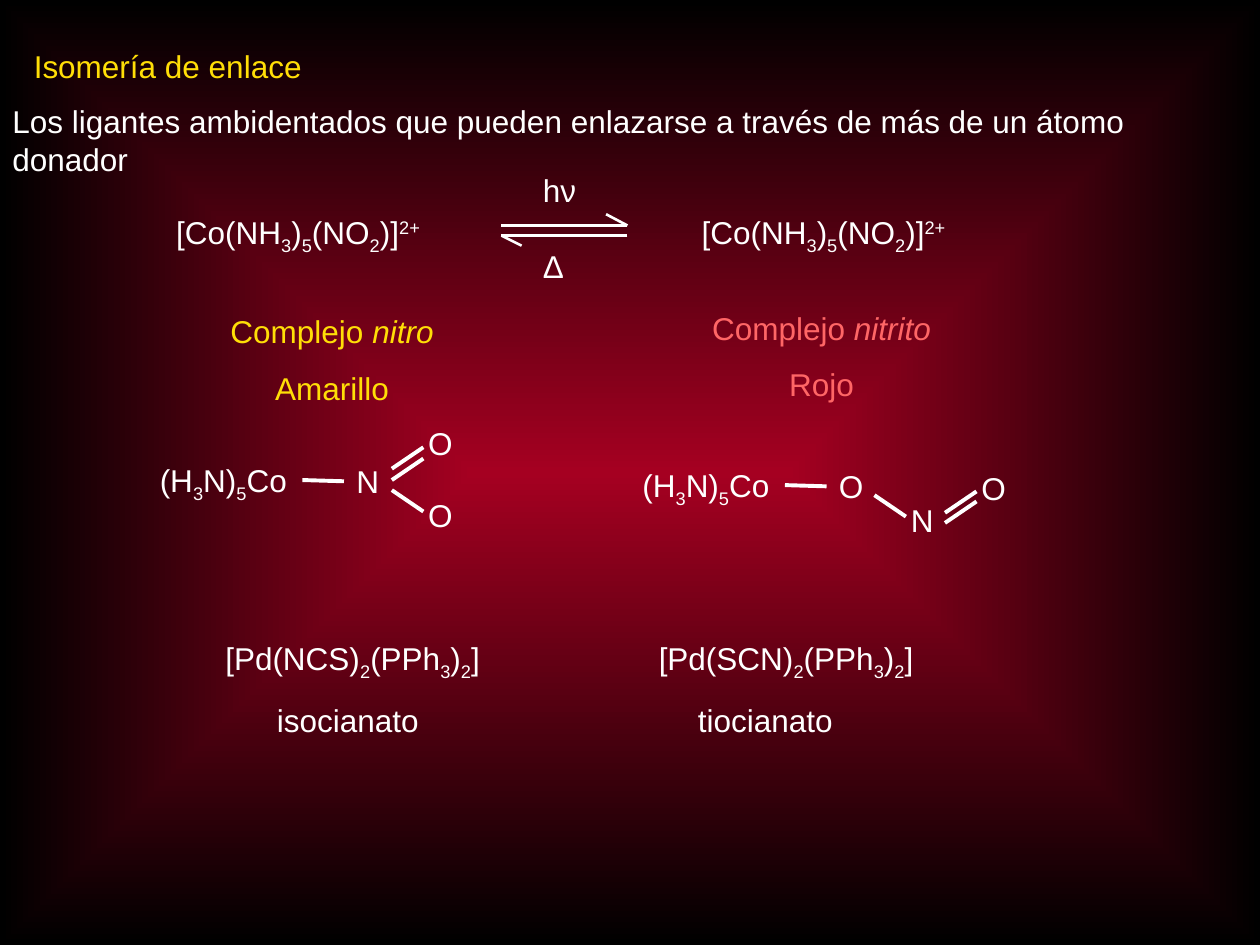
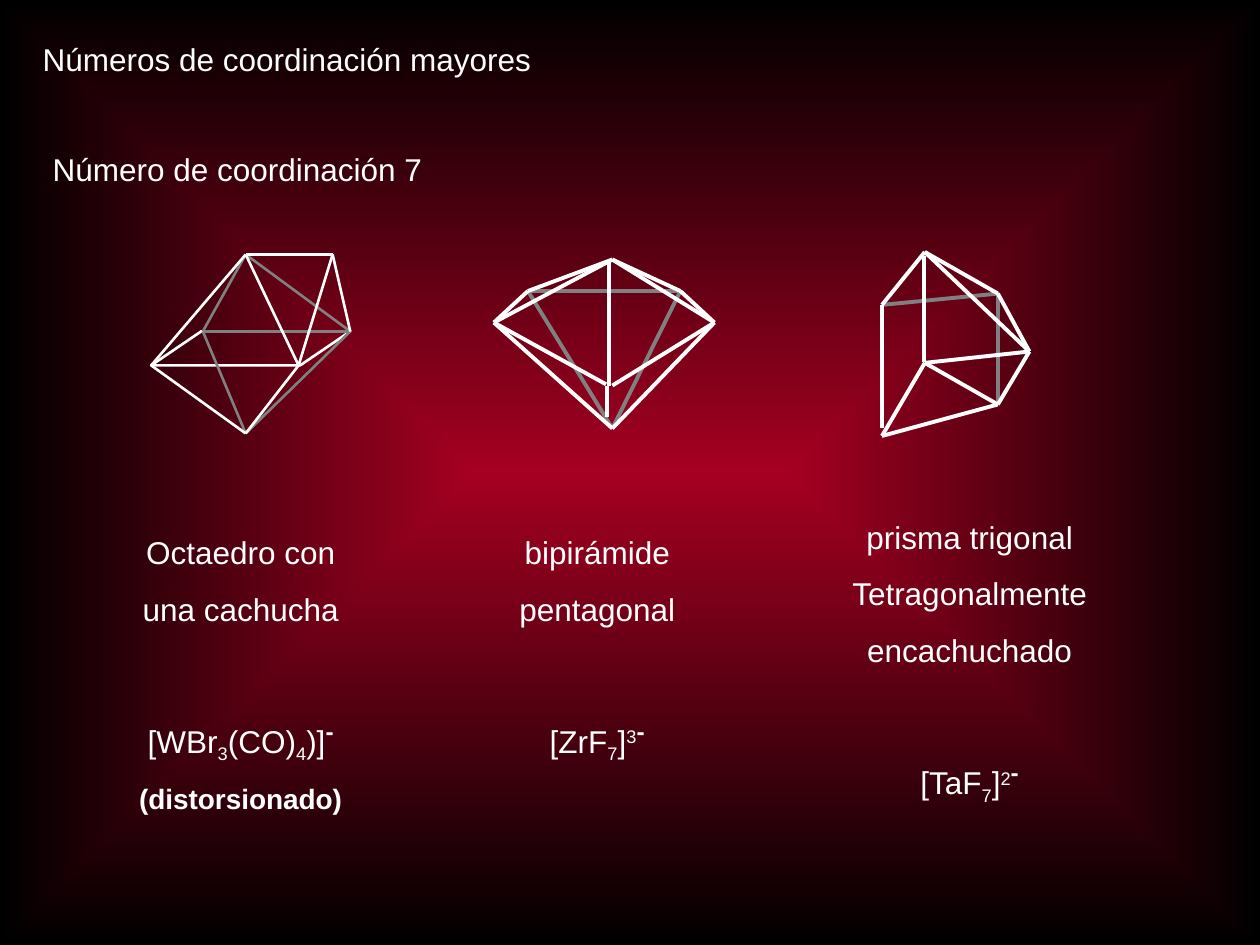
"""Build two chemistry slides: linkage isomerism and coordination number 7."""
from lxml import etree
from pptx import Presentation
from pptx.dml.color import RGBColor
from pptx.enum import shapes, text
from pptx.oxml.ns import qn
from pptx.util import Pt

PX = 9144
WHITE, GRAY, GOLD, ROSE = "FFFFFF", "808080", "FFDE07", "FF6666"
MARKS = {
    "_": {"baseline": "-25000"},
    "^": {"baseline": "30000"},
    "~": {"baseline": "30000", "sz": "2400", "b": "1"},
    "/": {"i": "1"},
    "*": {"sz": "1600", "b": "1"},
}
hue = RGBColor.from_string


def write(slide, rect, lines, color=WHITE, align="LEFT", space=1.0, gaps={}, tabs=(), wrap=False):
    box = slide.shapes.add_textbox(*(n * PX for n in rect))
    frame = box.text_frame
    frame.word_wrap = wrap
    for i, line in enumerate(lines):
        para = frame.paragraphs[0] if i == 0 else frame.add_paragraph()
        form = {"alignment": text.PP_ALIGN[align], "line_spacing": space,
                "space_before": Pt(gaps.get(i, 0))}
        for key, val in form.items():
            setattr(para, key, val)
        if tabs:
            stops = etree.SubElement(para._p.get_or_add_pPr(), qn("a:tabLst"))
            for stop in tabs[i]:
                etree.SubElement(stops, qn("a:tab"), pos=str(stop * PX), algn="l")
        for part in line.split("|"):
            mark = MARKS.get(part[0], {})
            run = para.add_run()
            run.text = part[1:] if mark else part
            for key, val in {"name": "Arial", "size": Pt(18)}.items():
                setattr(run.font, key, val)
            run.font.color.rgb = hue(color)
            for key, val in mark.items():
                run._r.get_or_add_rPr().set(key, val)
    return box


def draw(slide, start, end, color=WHITE, width=2.25):
    ends = (n * PX for n in (*start, *end))
    line = slide.shapes.add_connector(shapes.MSO_CONNECTOR.STRAIGHT, *ends)
    line.line.color.rgb = hue(color)
    line.line.width = Pt(width)
    etree.SubElement(line._element.spPr, qn("a:effectLst"))
    return line


deck = Presentation()
deck.slide_width, deck.slide_height = 1000 * PX, 750 * PX
master = deck.slide_master
fill = master.background.fill
fill.gradient()
for stop, color in zip(fill.gradient_stops, ("A50021", "000000")):
    stop.color.rgb = hue(color)
grad = next(master.element.iter(qn("a:gradFill")))
grad.remove(grad.find(qn("a:lin")))
glow = etree.SubElement(grad, qn("a:path"), path="shape")
etree.SubElement(glow, qn("a:fillToRect"), dict.fromkeys("ltrb", "50000"))
bond, seven = (deck.slides.add_slide(deck.slide_layouts[6]) for _ in range(2))

write(bond, (17, 17, 233, 55), ["Isomería de enlace"], GOLD, space=1.5)
write(bond, (0, 76, 990, 40), ["Los ligantes ambidentados que pueden enlazarse "
      "a través de más de un átomo donador"], wrap=True)
ion = "[Co(NH|_3|)|_5|(NO|_2|)]|^2+"
write(bond, (130, 147, 720, 55), [f"{ion}|\t{ion}"], space=1.5, tabs=[[417]], wrap=True)
for start, end in (((398, 179), (498, 179)), ((498, 179), (481, 170)),
                   ((498, 187), (398, 187)), ((398, 187), (414, 195))):
    draw(bond, start, end, width=1.5)
write(bond, (421, 131, 47, 100), ["hν", "Δ"], gaps={1: 21.5})

for left, top, atom, wide in ((117, 361, "N", 38), (500, 365, "O", 40)):
    metal = write(bond, (left, top, 123, 40), ["(H|_3|N)|_5|Co"])
    donor = write(bond, (left + 156, top + 1, wide, 40), [atom])
    link = draw(bond, (left + 123, top + 20), (left + 156, top + 21))
    link.begin_connect(metal, 3)
    link.end_connect(donor, 1)
for left, top, atom, wide in ((330, 332, "O", 40), (330, 389, "O", 40),
                              (769, 367, "O", 40), (713, 393, "N", 38)):
    write(bond, (left, top, wide, 40), [atom])
for left, top, rise in ((311, 372, -17), (311, 381, -17), (311, 389, 17),
                        (750, 407, -17), (750, 415, -17), (694, 393, 17)):
    draw(bond, (left, top), (left + 25, top + rise))

write(bond, (173, 228, 181, 100), ["Complejo |/nitro", "Amarillo"], GOLD, "CENTER", 1.5)
write(bond, (555, 225, 194, 145), ["Complejo |/nitrito", "Rojo"], ROSE, "CENTER", 1.5)
write(bond, (169, 485, 580, 100),
      ["[Pd(NCS)|_2|(PPh|_3|)|_2|]\t[Pd(SCN)|_2|(PPh|_3|)|_2|]", "\tisocianato\ttiocianato"],
      space=1.5, tabs=[[344], [41, 375]], wrap=True)

write(seven, (24, 27, 408, 40), ["Números de coordinación mayores"])
write(seven, (32, 114, 313, 40), ["Número de coordinación 7"])

base = seven.shapes.add_shape(shapes.MSO_SHAPE.PARALLELOGRAM,
                              *(n * PX for n in (120, 263, 158, 27)))
base.adjustments[0] = 1.471
base.shadow.inherit = False
base.fill.background()
base.line.color.rgb = hue(WHITE)
base.line.width = Pt(1.5)

octa = {"a": (195, 202), "b": (264, 202), "c": (161, 263), "d": (278, 263),
        "e": (120, 290), "f": (237, 290), "g": (195, 344)}
penta = {"a": (486, 206), "b": (419, 231), "c": (540, 231), "d": (392, 256),
         "e": (567, 256), "f": (481, 305), "g": (486, 306), "h": (486, 340),
         "i": (483, 206), "j": (483, 306), "k": (482, 331), "l": (482, 306)}
prism = {"a": (700, 242), "b": (792, 233), "c": (700, 346), "d": (792, 321),
         "e": (734, 288), "f": (734, 200), "g": (817, 279), "h": (700, 340),
         "i": (733, 287), "j": (733, 203)}
for points, width, back, front in (
        (octa, 1.5, "ad ac gd cg cd", "ae ge gf ab bd fb af"),
        (penta, 2.25, "hb hc bc", "bd ce df ge ij ba da ca ea he hd kl"),
        (prism, 2.25, "ab db", "cd ce ed ha bf af eg dg bg fg ij")):
    for color, edges in ((GRAY, back), (WHITE, front)):
        for start, end in edges.split():
            draw(seven, points[start], points[end], color, width)

for rect, lines, last in (
        ((100, 403, 182, 231), ["Octaedro con", "una cachucha",
                                "[WBr|_3|(CO)|_4|)]|~-", "*(distorsionado)"], 2),
        ((402, 403, 144, 191), ["bipirámide", "pentagonal", "[ZrF|_7|]|^3|~-"], 2),
        ((665, 391, 209, 236), ["prisma trigonal", "Tetragonalmente", "encachuchado",
                                "[TaF|_7|]|^2|~-"], 3)):
    write(seven, rect, lines, align="CENTER", space=1.5, gaps={last: 32.5})

deck.save("out.pptx")
